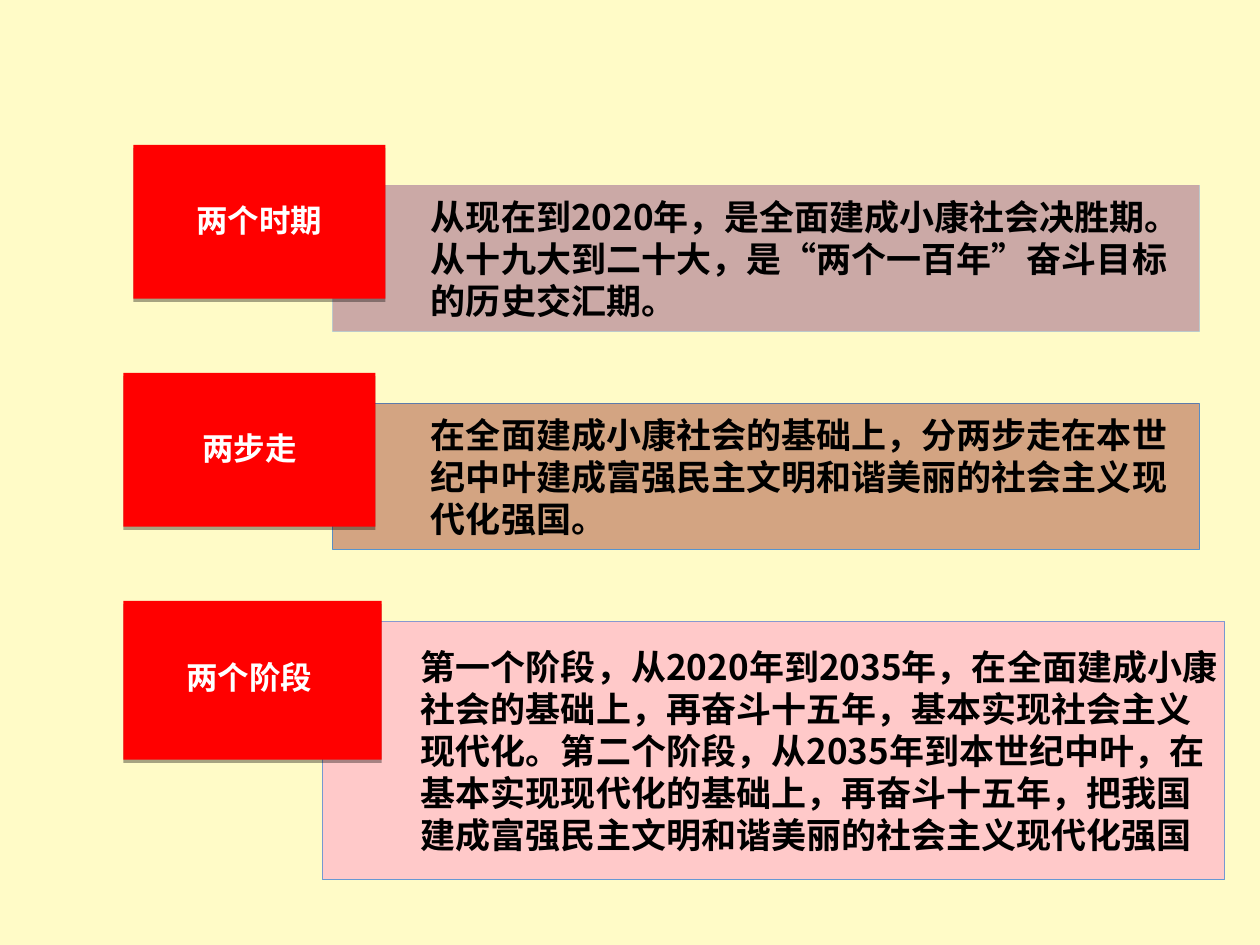
from lxml.etree import SubElement
from pptx import Presentation
from pptx.dml.color import RGBColor
from pptx.enum.lang import MSO_LANGUAGE_ID as Language
from pptx.enum.shapes import MSO_SHAPE as Shape
from pptx.enum.text import MSO_ANCHOR as Anchor, MSO_AUTO_SIZE as AutoSize, PP_ALIGN as Align
from pptx.oxml.ns import qn
from pptx.util import Inches, Pt

CREAM = RGBColor(0xFF, 0xFB, 0xC7)
RED = RGBColor(0xFF, 0x00, 0x00)
SKY = RGBColor(0x56, 0xB6, 0xFA)
MAROON = RGBColor(0x80, 0x00, 0x00)
PINK = RGBColor(0xFF, 0x99, 0xCC)
PALE_TEAL = RGBColor(0xB6, 0xDC, 0xDF)
BLUE = RGBColor(0x56, 0x98, 0xD3)
BLACK = RGBColor(0, 0, 0)
WHITE = RGBColor(0xFF, 0xFF, 0xFF)
CHINESE_FONT = "Noto Sans CJK SC"

SECTIONS = [
    {
        "label": "两个时期",
        "text": "从现在到2020年，是全面建成小康社会决胜期。从十九大到二十大，"
                "是“两个一百年”奋斗目标的历史交汇期。",
        "card": (1.06, 1.15, 2, 1.22),
        "panel": (2.64, 1.47, 6.88, 1.16),
        "back": (SKY, 40),
        "front": (RED, 24),
        "border": PALE_TEAL,
        "font": CHINESE_FONT,
    },
    {
        "label": "两步走",
        "text": "在全面建成小康社会的基础上，分两步走在本世纪中叶"
                "建成富强民主文明和谐美丽的社会主义现代化强国。",
        "card": (0.98, 2.96, 2, 1.22),
        "panel": (2.64, 3.2, 6.88, 1.16),
        "back": (MAROON, 19),
        "front": (MAROON, 19),
        "border": BLUE,
        "font": "Arial",
    },
    {
        "label": "两个阶段",
        "text": "第一个阶段，从2020年到2035年，在全面建成小康社会的基础上，"
                "再奋斗十五年，基本实现社会主义现代化。第二个阶段，从2035年到本世纪中叶，"
                "在基本实现现代化的基础上，再奋斗十五年，"
                "把我国建成富强民主文明和谐美丽的社会主义现代化强国",
        "card": (0.98, 4.77, 2.05, 1.26),
        "panel": (2.56, 4.93, 7.16, 2.05),
        "back": (PINK, 29),
        "front": (PINK, 29),
        "border": BLUE,
        "font": CHINESE_FONT,
    },
]


def add_rectangle(shapes, box, color, opacity=100):
    shape = shapes.add_shape(Shape.RECTANGLE, *map(Inches, box))
    shape.shadow.inherit = False
    shape.fill.solid()
    shape.fill.fore_color.rgb = color
    shape.line.fill.background()
    if opacity < 100:
        color_element = shape.fill._xPr.find(qn("a:solidFill"))[0]
        SubElement(color_element, qn("a:alpha"), val=str(opacity * 1000))
    return shape


def add_shadow(shape):
    effects = shape._element.spPr.find(qn("a:effectLst"))
    shadow = SubElement(effects, qn("a:outerShdw"), blurRad="0", dist=str(Pt(1.8)),
                        dir="5400000", rotWithShape="0")
    color = SubElement(shadow, qn("a:srgbClr"), val="000000")
    SubElement(color, qn("a:alpha"), val="35000")


def add_run(paragraph, text, size, color, font_name=CHINESE_FONT):
    run = paragraph.add_run()
    run.text = text
    font = run.font
    font.size = Pt(size)
    font.bold = True
    font.color.rgb = color
    font.name = font_name
    font.language_id = Language.SIMPLIFIED_CHINESE
    SubElement(font._element, qn("a:ea"), typeface=CHINESE_FONT)


def add_panel(slide, section):
    shapes = slide.shapes.add_group_shape().shapes
    back = add_rectangle(shapes, section["panel"], *section["back"])
    back.line.color.rgb = section["border"]
    back.line.width = Pt(0.75)
    front = add_rectangle(shapes, section["panel"], *section["front"])
    frame = front.text_frame
    frame.word_wrap = True
    frame.vertical_anchor = Anchor.MIDDLE
    frame.margin_left = Inches(0.78)
    frame.margin_top = frame.margin_right = frame.margin_bottom = Inches(0.05)
    paragraph = frame.paragraphs[0]
    paragraph.alignment = Align.LEFT
    paragraph._p.get_or_add_pPr().set("hangingPunct", "0")
    add_run(paragraph, section["text"], 20, BLACK, section["font"])


def add_card(slide, section):
    add_shadow(add_rectangle(slide.shapes, section["card"], RED))
    left, top = section["card"][:2]
    label = slide.shapes.add_textbox(*map(Inches, (left, top + 0.4, 2, 0.4)))
    frame = label.text_frame
    frame.word_wrap = True
    frame.auto_size = AutoSize.SHAPE_TO_FIT_TEXT
    paragraph = frame.paragraphs[0]
    paragraph.alignment = Align.CENTER
    add_run(paragraph, section["label"], 18, WHITE)


def main():
    presentation = Presentation()
    presentation.slide_width = Inches(10)
    presentation.slide_height = Inches(7.5)
    slide = presentation.slides.add_slide(presentation.slide_layouts[6])
    slide.background.fill.solid()
    slide.background.fill.fore_color.rgb = CREAM
    for section in SECTIONS:
        add_panel(slide, section)
        add_card(slide, section)
    presentation.save("out.pptx")


if __name__ == "__main__":
    main()
